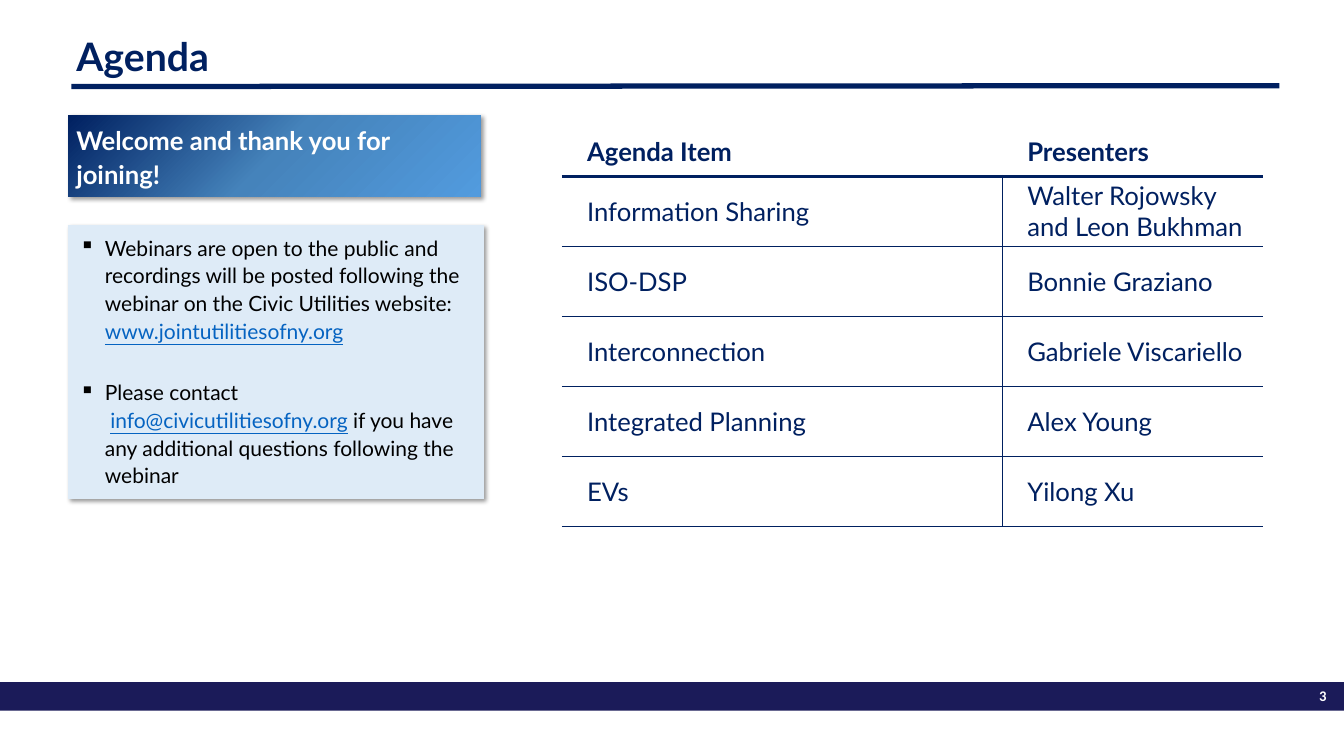
import pptx
import pptx.dml.color
import pptx.enum.shapes
import pptx.enum.text
import pptx.oxml
import pptx.oxml.ns
import pptx.util

Pt = pptx.util.Pt
ANCHOR = pptx.enum.text.MSO_ANCHOR
ALIGN = pptx.enum.text.PP_ALIGN
COLOURS = {
    "navy": "002060", "band": "1B1B59", "pale": "DEEBF7", "middle": "4583BB",
    "sky": "529BDE", "link": "0563C1", "black": "000000", "white": "FFFFFF",
}
AGENDA = [
    ("Agenda Item", "Presenters"),
    ("Information Sharing", "Walter Rojowsky and Leon Bukhman"),
    ("ISO-DSP", "Bonnie Graziano"),
    ("Interconnection", "Gabriele Viscariello"),
    ("Integrated Planning", "Alex Young"),
    ("EVs", "Yilong Xu"),
]
NOTES = [
    [
        ("Webinars are open to the public and recordings will be posted following "
         "the webinar on the Civic Utilities website:", "black"),
        None,
        ("www.jointutilitiesofny.org", "link"),
    ],
    [
        ("Please contact", "black"),
        None,
        (" ", "black"),
        ("info@civicutilitiesofny.org", "link"),
        (" if you have any additional questions following the webinar", "black"),
    ],
]


def rgb(name):
    return pptx.dml.color.RGBColor.from_string(COLOURS[name])


def drawing_xml(body):
    return pptx.oxml.parse_xml(body.replace(">", f" {pptx.oxml.ns.nsdecls('a')}>", 1))


def add_run(paragraph, text, size, colour, bold=False, font="Lato"):
    run = paragraph.add_run()
    run.text = text
    run.font.name = font
    run.font.size = Pt(size)
    run.font.bold = bold
    run.font.color.rgb = rgb(colour)
    return run


def add_text(slide, left, top, width, height, anchor=ANCHOR.TOP):
    frame = slide.shapes.add_textbox(Pt(left), Pt(top), Pt(width), Pt(height)).text_frame
    frame.word_wrap = True
    frame.vertical_anchor = anchor
    return frame


def add_rectangle(slide, left, top, width, height, colour):
    shape = slide.shapes.add_shape(
        pptx.enum.shapes.MSO_SHAPE.RECTANGLE, Pt(left), Pt(top), Pt(width), Pt(height))
    shape.shadow.inherit = False
    shape.fill.solid()
    shape.fill.fore_color.rgb = rgb(colour)
    shape.line.fill.background()
    return shape


def add_shadow(shape):
    effects = shape._element.spPr.find(pptx.oxml.ns.qn("a:effectLst"))
    effects.append(drawing_xml(
        f'<a:outerShdw blurRad="{Pt(4)}" dist="{Pt(3)}" dir="2700000" algn="tl" rotWithShape="0">'
        f'<a:srgbClr val="{COLOURS["black"]}"><a:alpha val="40000"/></a:srgbClr></a:outerShdw>'))


def set_gradient(shape, colours):
    shape.fill.gradient()
    shape.fill.gradient_angle = 315
    stops = shape._element.spPr.find(".//" + pptx.oxml.ns.qn("a:gsLst"))
    stops.clear()
    for index, colour in enumerate(colours):
        position = index * 100000 // (len(colours) - 1)
        stops.append(drawing_xml(
            f'<a:gs pos="{position}"><a:srgbClr val="{COLOURS[colour]}"/></a:gs>'))


def add_rule(slide, start, end):
    line = slide.shapes.add_connector(
        pptx.enum.shapes.MSO_CONNECTOR.STRAIGHT, *map(Pt, start), *map(Pt, end))
    line.line.color.rgb = rgb("navy")
    line.line.width = Pt(4.5)
    line._element.spPr.append(drawing_xml("<a:effectLst></a:effectLst>"))


def set_borders(cell, widths):
    properties = cell._tc.get_or_add_tcPr()
    for index, side in enumerate("LRTB"):
        width = widths.get(side, 0)
        fill = (f'<a:solidFill><a:srgbClr val="{COLOURS["navy"]}"/></a:solidFill>'
                if width else "<a:noFill/>")
        properties.insert(index, drawing_xml(f'<a:ln{side} w="{Pt(width)}">{fill}</a:ln{side}>'))


def add_agenda_table(slide):
    widths = (377.28, 223.92)
    heights = [43.2] + [60] * (len(AGENDA) - 1)
    frame = slide.shapes.add_table(
        len(AGENDA), 2, Pt(481.68), Pt(108), Pt(sum(widths)), Pt(sum(heights)))
    table = frame.table
    table.first_row = False
    table.horz_banding = False
    style = table._tbl.tblPr.find(pptx.oxml.ns.qn("a:tableStyleId"))
    style.text = "{2D5ABB26-0587-4C30-8999-92F81FD0307C}"
    for column, width in zip(table.columns, widths):
        column.width = Pt(width)
    for row_index, (row, height) in enumerate(zip(table.rows, heights)):
        row.height = Pt(height)
        header = row_index == 0
        for column_index, cell in enumerate(row.cells):
            cell.fill.background()
            cell.vertical_anchor = ANCHOR.MIDDLE
            borders = {"B": 3 if header else 0.5}
            if not header:
                borders["T"] = 3 if row_index == 1 else 0.5
                borders["L" if column_index else "R"] = 0.5
            set_borders(cell, borders)
            paragraph = cell.text_frame.paragraphs[0]
            paragraph._p.get_or_add_pPr().set("marL", str(Pt(14.4)))
            add_run(paragraph, AGENDA[row_index][column_index], 22, "navy", header)


def add_notes(slide):
    frame = add_text(slide, 61.2, 195.84, 356.4, 190)
    for index, parts in enumerate(NOTES):
        paragraph = frame.add_paragraph() if index else frame.paragraphs[0]
        properties = paragraph._p.get_or_add_pPr()
        properties.set("marL", str(Pt(21.6)))
        properties.set("indent", str(-Pt(21.6)))
        properties.append(drawing_xml('<a:buChar char="▪"></a:buChar>'))
        paragraph.line_spacing = 1.1
        paragraph.space_before = Pt(14.4 if index else 0)
        paragraph.space_after = Pt(14.4)
        for part in parts:
            if part is None:
                paragraph.add_line_break()
                continue
            text, colour = part
            add_run(paragraph, text, 18, colour).font.underline = colour == "link"


def add_welcome(slide):
    shape = add_rectangle(slide, 58.32, 98.64, 353.52, 69.84, "navy")
    set_gradient(shape, ("navy", "middle", "sky"))
    add_shadow(shape)
    shape.text_frame.word_wrap = True
    shape.text_frame.vertical_anchor = ANCHOR.MIDDLE
    paragraph = shape.text_frame.paragraphs[0]
    paragraph.alignment = ALIGN.LEFT
    paragraph.line_spacing = 1.1
    add_run(paragraph, "Welcome and thank you for joining!", 22, "white", True)


def main():
    presentation = pptx.Presentation()
    presentation.slide_width = Pt(1152)
    presentation.slide_height = Pt(648)
    slide = presentation.slides.add_slide(presentation.slide_layouts[6])

    add_rectangle(slide, 0, 584.64, 1152, 24.48, "band")
    number = add_text(slide, 1096.56, 585.36, 47.52, 22.32).paragraphs[0]
    number.alignment = ALIGN.RIGHT
    add_run(number, "3", 12.6, "white", True, "Calibri")
    add_rule(slide, (61.2, 74.16), (1096.56, 73.44))

    title = add_text(slide, 58.32, 29.52, 1035.36, 41.04, ANCHOR.MIDDLE).paragraphs[0]
    title.line_spacing = 0.9
    add_run(title, "Agenda", 33.6, "navy", True)

    add_shadow(add_rectangle(slide, 58.32, 192.96, 356.4, 234.72, "pale"))
    add_agenda_table(slide)
    add_notes(slide)
    add_welcome(slide)
    presentation.save("out.pptx")


if __name__ == "__main__":
    main()
